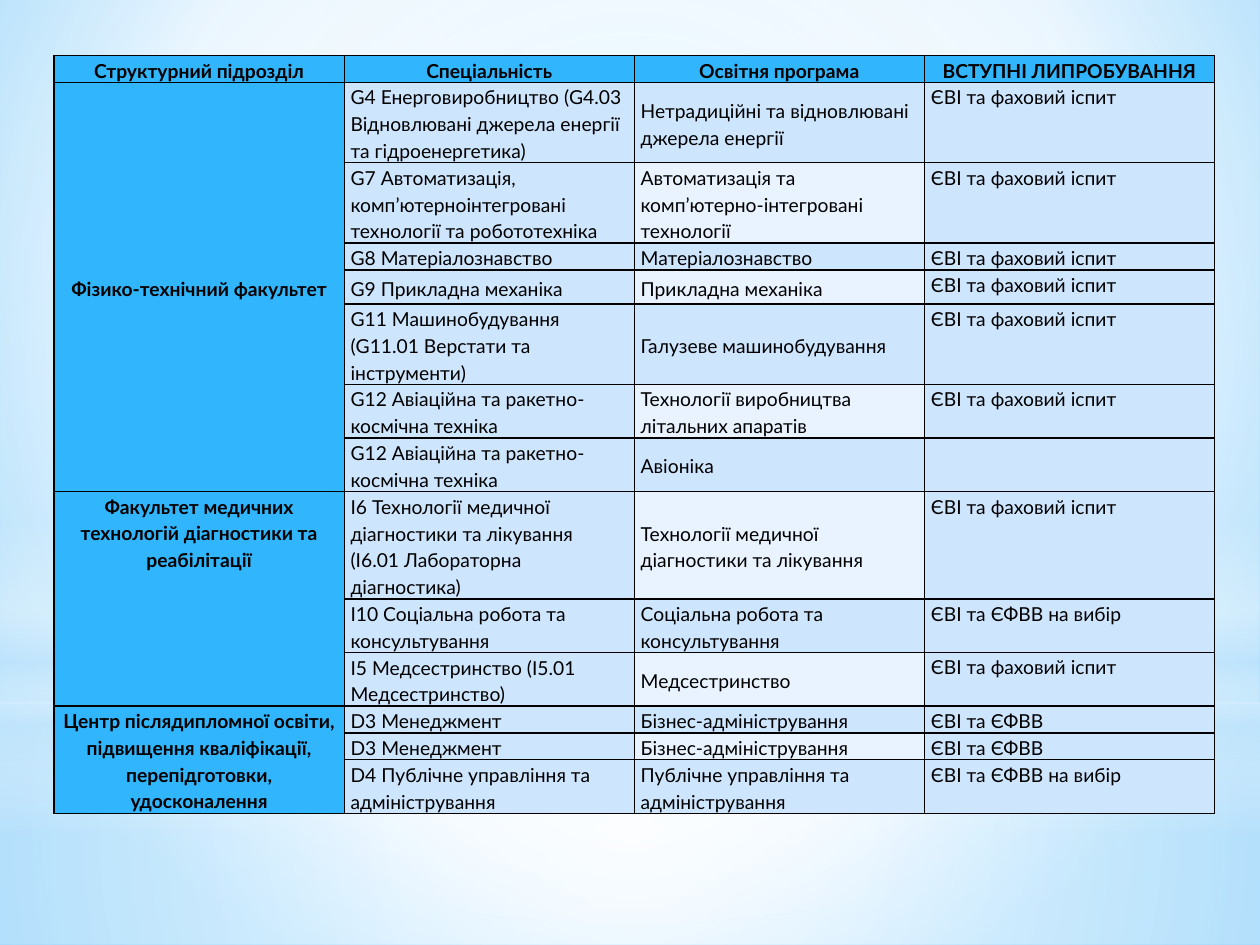
from lxml.etree import SubElement
from pptx import Presentation
from pptx.dml.color import RGBColor
from pptx.enum.shapes import MSO_SHAPE as Shape
from pptx.enum.text import MSO_ANCHOR as Anchor, PP_ALIGN as Align
from pptx.oxml.ns import qn
from pptx.util import Inches, Pt

SLIDE_WIDTH, SLIDE_HEIGHT = Inches(10), Inches(7.5)
WHITE = RGBColor(0xFF, 0xFF, 0xFF)
BLACK = RGBColor(0, 0, 0)
PALE_SKY = RGBColor(0xC6, 0xE7, 0xFC)
LIGHT_SKY = RGBColor(0xB0, 0xE0, 0xFF)
DEEP_SKY = RGBColor(0x6B, 0xC5, 0xFF)
HEADING_BLUE = RGBColor(0x31, 0xB6, 0xFD)
CELL_BLUE = RGBColor(0xCE, 0xE5, 0xFE)
STRIPE_BLUE = RGBColor(0xE8, 0xF3, 0xFF)

LINE_HEIGHT = 0.2125  # inches per text line
CENTRE = (50, 50, 50, 50)

HEADINGS = ("Структурний підрозділ", "Спеціальність",
            "Освітня програма", "ВСТУПНІ ЛИПРОБУВАННЯ")
EXAM = "ЄВІ та фаховий іспит"
CHOICE = "ЄВІ та ЄФВВ на вибір"
UNIFIED = "ЄВІ та ЄФВВ"

# Each unit: name, anchor, rows of (lines, specialty, programme, entrance test)
UNITS = (
    ("Фізико-технічний факультет", Anchor.MIDDLE, (
        (3, "G4 Енерговиробництво (G4.03 Відновлювані джерела енергії та гідроенергетика)",
         "Нетрадиційні та відновлювані джерела енергії", EXAM),
        (3, "G7 Автоматизація, комп’ютерноінтегровані технології та робототехніка",
         "Автоматизація та комп’ютерно-інтегровані технології", EXAM),
        (1, "G8 Матеріалознавство", "Матеріалознавство", EXAM),
        (1.27, "G9 Прикладна механіка", "Прикладна механіка", EXAM),
        (3, "G11 Машинобудування (G11.01 Верстати та інструменти)",
         "Галузеве машинобудування", EXAM),
        (2, "G12 Авіаційна та ракетно-космічна техніка",
         "Технології виробництва літальних апаратів", EXAM),
        (2, "G12 Авіаційна та ракетно-космічна техніка", "Авіоніка", ""),
    )),
    ("Факультет медичних технологій діагностики та реабілітації", Anchor.TOP, (
        (4, "І6 Технології медичної діагностики та лікування\n(І6.01 Лабораторна діагностика)",
         "Технології медичної діагностики та лікування", EXAM),
        (2, "І10 Соціальна робота та консультування",
         "Соціальна робота та консультування", CHOICE),
        (2, "І5 Медсестринство (І5.01 Медсестринство)", "Медсестринство", EXAM),
    )),
    ("Центр післядипломної освіти, підвищення кваліфікації, перепідготовки, удосконалення",
     Anchor.TOP, (
        (1, "D3 Менеджмент", "Бізнес-адміністрування", UNIFIED),
        (1, "D3 Менеджмент", "Бізнес-адміністрування", UNIFIED),
        (2, "D4 Публічне управління та адміністрування",
         "Публічне управління та адміністрування", CHOICE),
    )),
)


def set_gradient(holder, stops, focus=None):
    """Turn the holder's solid fill into a gradient: circular with a focus, else vertical."""
    solid = holder.find(qn("a:solidFill"))
    gradient = holder.makeelement(qn("a:gradFill"), {"rotWithShape": "1"})
    stop_list = SubElement(gradient, qn("a:gsLst"))
    for position, colour, opacity in stops:
        stop = SubElement(stop_list, qn("a:gs"), pos=str(position * 1000))
        tint = SubElement(stop, qn("a:srgbClr"), val=str(colour))
        if opacity < 100:
            SubElement(tint, qn("a:alpha"), val=str(opacity * 1000))
    if focus:
        circle = SubElement(gradient, qn("a:path"), {"path": "circle"})
        edges = {side: str(share * 1000) for side, share in zip("ltrb", focus)}
        SubElement(circle, qn("a:fillToRect"), edges)
    else:
        SubElement(gradient, qn("a:lin"), ang="5400000", scaled="0")
    holder.replace(solid, gradient)


def add_glow(slide, kind, top, height, stops, focus=None):
    """Full-width translucent band; top and height are shares of the slide."""
    glow = slide.shapes.add_shape(kind, 0, int(SLIDE_HEIGHT * top),
                                  SLIDE_WIDTH, int(SLIDE_HEIGHT * height))
    glow.shadow.inherit = False
    glow.line.fill.background()
    glow.fill.solid()
    set_gradient(glow.element.spPr, stops, focus)


def build_backdrop(slide):
    slide.background.fill.solid()
    set_gradient(slide.element.xpath("p:cSld/p:bg/p:bgPr")[0],
                 ((0, LIGHT_SKY, 100), (60, WHITE, 100), (100, DEEP_SKY, 100)),
                 (20, 10, 20, 60))
    # Lower and upper halves
    add_glow(slide, Shape.RECTANGLE, 0.744, 0.256,
             ((0, WHITE, 91), (37, WHITE, 76), (100, PALE_SKY, 79)), CENTRE)
    add_glow(slide, Shape.RECTANGLE, 0, 0.744,
             ((0, WHITE, 89), (48, WHITE, 62), (100, PALE_SKY, 79)), CENTRE)
    # Horizon haze and central light
    add_glow(slide, Shape.RECTANGLE, 0.55, 0.333,
             ((0, WHITE, 0), (29, WHITE, 30), (45, PALE_SKY, 40),
              (55, WHITE, 26), (65, PALE_SKY, 60), (100, WHITE, 0)))
    add_glow(slide, Shape.OVAL, 0.233, 0.744,
             ((0, WHITE, 100), (56, WHITE, 0)), CENTRE)


def add_borders(cell):
    properties = cell._tc.get_or_add_tcPr()
    for side in "LRTB":
        border = SubElement(properties, qn(f"a:ln{side}"), w=str(Pt(1)))
        SubElement(SubElement(border, qn("a:solidFill")), qn("a:srgbClr"), val=str(BLACK))


def fill_cell(cell, text, colour, anchor=Anchor.TOP, heading=False):
    cell.fill.solid()
    cell.fill.fore_color.rgb = colour
    cell.margin_left = cell.margin_right = Inches(0.05)
    cell.margin_top = cell.margin_bottom = 0
    cell.vertical_anchor = anchor
    cell.text_frame.text = text
    for paragraph in cell.text_frame.paragraphs:
        paragraph.alignment = Align.CENTER if heading else Align.LEFT
        paragraph.line_spacing = 1.15
        for run in paragraph.runs:
            run.font.name = "Lato"
            run.font.size = Pt(11)
            run.font.bold = heading
            run.font.color.rgb = BLACK


def build_admissions_table(slide, left, top, width):
    line_counts = [1] + [row[0] for _, _, rows in UNITS for row in rows]
    heights = [Inches(LINE_HEIGHT * count) for count in line_counts]
    table = slide.shapes.add_table(len(heights), len(HEADINGS), left, top,
                                   width, sum(heights)).table
    for row, height in zip(table.rows, heights):
        row.height = height
    for cell in table.iter_cells():
        add_borders(cell)

    # Heading row
    for column, heading in enumerate(HEADINGS):
        fill_cell(table.cell(0, column), heading, HEADING_BLUE, heading=True)

    # One merged cell per unit, followed by its programmes
    index = 1
    for unit, anchor, rows in UNITS:
        unit_cell = table.cell(index, 0)
        unit_cell.merge(table.cell(index + len(rows) - 1, 0))
        fill_cell(unit_cell, unit, HEADING_BLUE, anchor, heading=True)
        for _, specialty, programme, test in rows:
            stripe = CELL_BLUE if index % 2 else STRIPE_BLUE
            fill_cell(table.cell(index, 1), specialty, CELL_BLUE, Anchor.MIDDLE)
            fill_cell(table.cell(index, 2), programme, stripe, Anchor.MIDDLE)
            fill_cell(table.cell(index, 3), test, CELL_BLUE)
            index += 1


def main():
    prs = Presentation()
    prs.slide_width, prs.slide_height = SLIDE_WIDTH, SLIDE_HEIGHT
    slide = prs.slides.add_slide(prs.slide_layouts[6])
    build_backdrop(slide)
    build_admissions_table(slide, Inches(0.43), Inches(0.44), Inches(9.21))
    prs.save("out.pptx")


if __name__ == "__main__":
    main()
